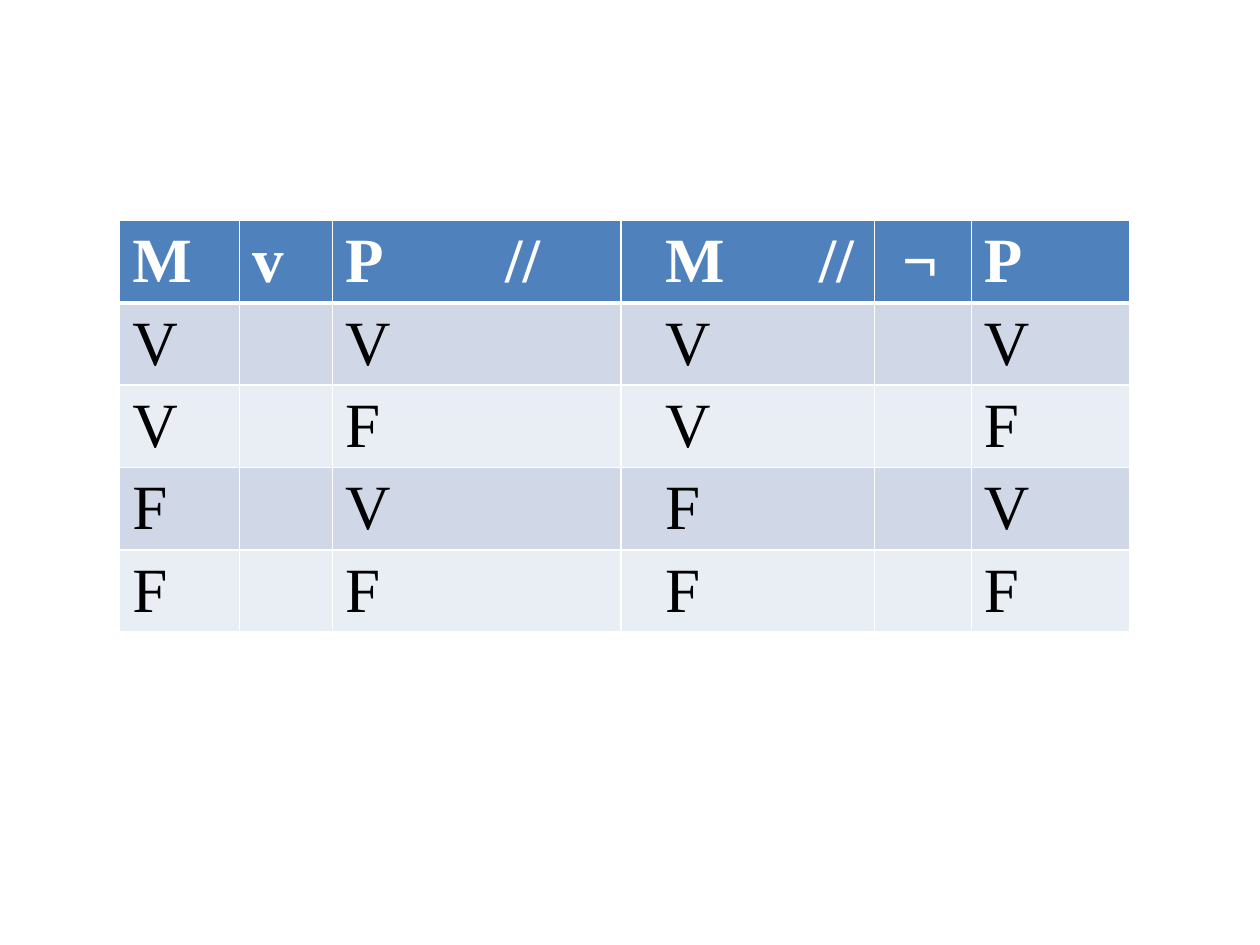
from dataclasses import dataclass

from lxml.etree import SubElement
from pptx import Presentation
from pptx.dml.color import RGBColor
from pptx.oxml.ns import qn
from pptx.slide import Slide
from pptx.table import _Cell as Cell
from pptx.util import Inches, Pt

WHITE = RGBColor(0xFF, 0xFF, 0xFF)
BLACK = RGBColor(0x00, 0x00, 0x00)
HEADER_BLUE = RGBColor(0x4F, 0x81, 0xBD)
BANDS = (RGBColor(0xD0, 0xD8, 0xE8), RGBColor(0xE9, 0xED, 0xF4))

FONT = "Times New Roman"
FONT_SIZE = Pt(36)
ROW_HEIGHT = 0.65
THIN, THICK = Pt(1), Pt(3)


@dataclass(frozen=True)
class Column:
    header: str
    values: str
    width: float
    indent: float = 0.1
    tab: float = 0


COLUMNS = (
    Column("M", "VVFF", 0.95),
    Column("v", "", 0.74),
    Column("P\t//", "VFVF", 2.29, tab=1.27),
    Column("M\t//", "VVFF", 2.01, indent=0.35, tab=1.22),
    Column("¬", "", 0.77, indent=0.22),
    Column("P", "VFVF", 1.26),
)
ROW_COUNT = 5


def set_borders(cell: Cell, top: int, bottom: int) -> None:
    properties = cell._tc.get_or_add_tcPr()
    for side, width in (("L", THIN), ("R", THIN), ("T", top), ("B", bottom)):
        line = SubElement(properties, qn(f"a:ln{side}"), w=str(width))
        fill = SubElement(line, qn("a:solidFill"))
        SubElement(fill, qn("a:srgbClr"), val=str(WHITE))


def fill_cell(cell: Cell, column: Column, row: int) -> None:
    is_header = row == 0
    set_borders(cell, THICK if row == 1 else THIN, THICK if is_header else THIN)
    cell.fill.solid()
    cell.fill.fore_color.rgb = HEADER_BLUE if is_header else BANDS[(row - 1) % 2]
    cell.margin_left = Inches(column.indent)

    paragraph = cell.text_frame.paragraphs[0]
    paragraph.text = column.header if is_header else column.values[row - 1:row]
    if is_header and column.tab:
        tabs = SubElement(paragraph._p.get_or_add_pPr(), qn("a:tabLst"))
        SubElement(tabs, qn("a:tab"), pos=str(Inches(column.tab)), algn="l")
    for run in paragraph.runs:
        run.font.name = FONT
        run.font.size = FONT_SIZE
        run.font.bold = is_header
        run.font.color.rgb = WHITE if is_header else BLACK


def add_truth_table(slide: Slide, left: float, top: float) -> None:
    width = sum(column.width for column in COLUMNS)
    table = slide.shapes.add_table(
        ROW_COUNT, len(COLUMNS), Inches(left), Inches(top),
        Inches(width), Inches(ROW_HEIGHT * ROW_COUNT),
    ).table
    for index, column in enumerate(COLUMNS):
        table.columns[index].width = Inches(column.width)
        for row in range(ROW_COUNT):
            fill_cell(table.cell(row, index), column, row)


def main() -> None:
    presentation = Presentation()
    presentation.slide_width = Inches(10)
    presentation.slide_height = Inches(7.5)
    slide = presentation.slides.add_slide(presentation.slide_layouts[6])
    add_truth_table(slide, 0.95, 1.75)
    presentation.save("out.pptx")


if __name__ == "__main__":
    main()
